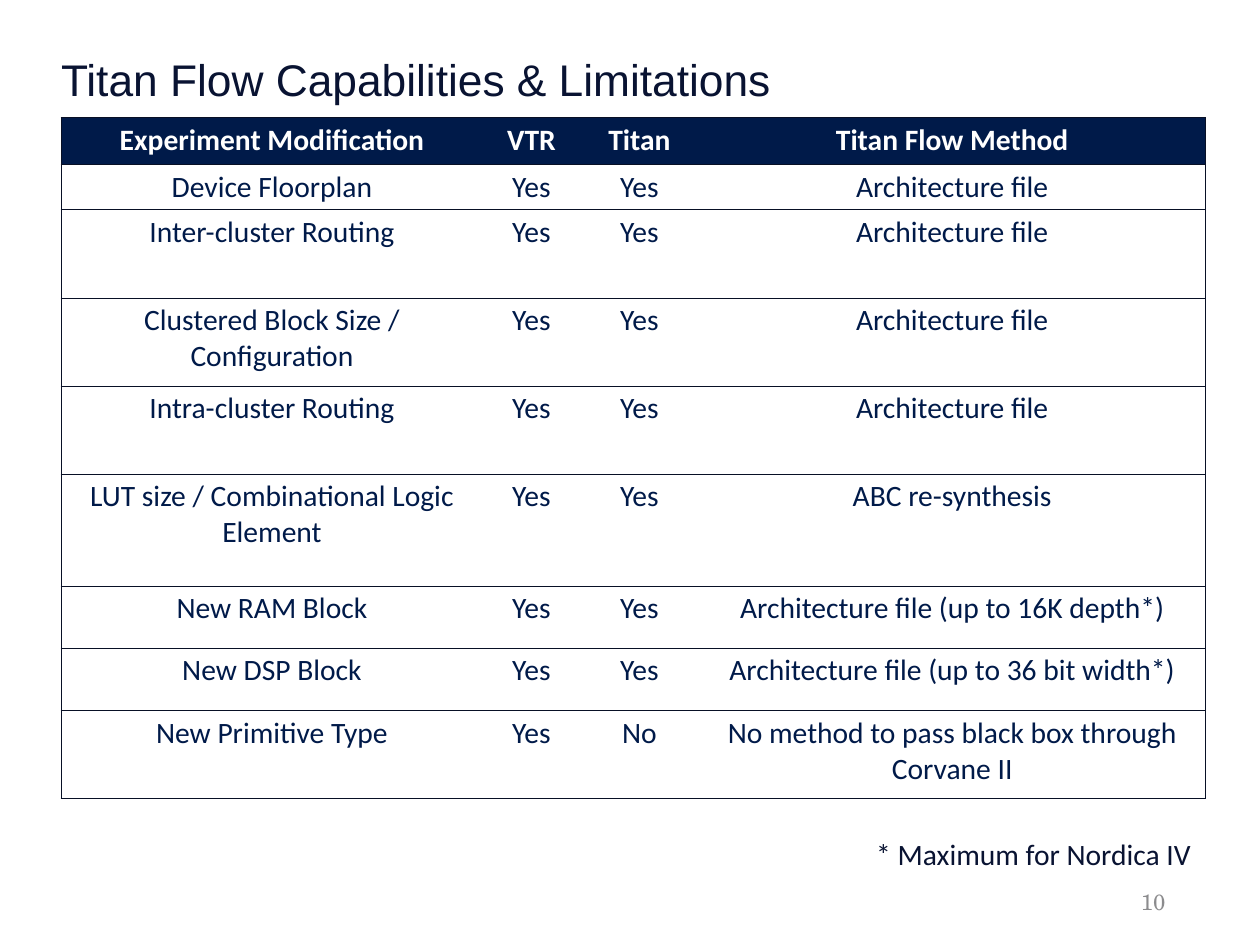
import dataclasses

import lxml.etree
import pptx
import pptx.dml.color
import pptx.enum.text
import pptx.oxml.ns
import pptx.util

Cm = pptx.util.Cm
Align = pptx.enum.text.PP_ALIGN
Anchor = pptx.enum.text.MSO_ANCHOR


@dataclasses.dataclass(frozen=True)
class Theme:
    """Colours, fonts and type sizes of the slide."""
    ink: str = "091332"
    navy: str = "001A49"
    rule: str = "081025"
    white: str = "FFFFFF"
    grey: str = "8C8C8E"
    head: str = "Arial"
    body: str = "Calibri"
    folio: str = "TeX Gyre Schola"
    big: int = 36
    text: int = 24
    small: int = 18
    line: int = 1


THEME = Theme()
FILE = "Architecture file"
HEADS = ("Experiment Modification", "VTR", "Titan", "Titan Flow Method")
WIDTHS = (12.09, 2.79, 3.4, 14.53)
HEAD_H = 1.35
ROWS = (
    (1.29, "Device Floorplan", "Yes", "Yes", FILE),
    (2.53, "Inter-cluster Routing", "Yes", "Yes", FILE),
    (2.53, "Clustered Block Size / Configuration", "Yes", "Yes", FILE),
    (2.53, "Intra-cluster Routing", "Yes", "Yes", FILE),
    (3.21, "LUT size / Combinational Logic Element", "Yes", "Yes",
     "ABC re-synthesis"),
    (1.78, "New RAM Block", "Yes", "Yes",
     "Architecture file (up to 16K depth*)"),
    (1.78, "New DSP Block", "Yes", "Yes",
     "Architecture file (up to 36 bit width*)"),
    (2.53, "New Primitive Type", "Yes", "No",
     "No method to pass black box through Corvane II"),
)


def rgb(code):
    """Turn a hex code into a colour."""
    return pptx.dml.color.RGBColor.from_string(code)


def add_run(para, text, face, size, color, bold=False):
    """Add one styled run to a paragraph."""
    run = para.add_run()
    run.text = text
    run.font.name = face
    run.font.size = pptx.util.Pt(size)
    run.font.bold = bold
    run.font.color.rgb = rgb(color)


def add_label(slide, box, text, face, size, color, align=Align.LEFT,
              anchor=Anchor.TOP):
    """Place a line of text in a box and return its frame."""
    frame = slide.shapes.add_textbox(*map(Cm, box)).text_frame
    frame.word_wrap = True
    frame.vertical_anchor = anchor
    para = frame.paragraphs[0]
    para.alignment = align
    add_run(para, text, face, size, color)
    return frame


def add_title(slide, box):
    """Place the slide title flush with its box."""
    frame = add_label(slide, box, "Titan Flow Capabilities & Limitations",
                      THEME.head, THEME.big, THEME.ink)
    frame.margin_left = frame.margin_right = 0
    frame.margin_top = frame.margin_bottom = 0
    frame.paragraphs[0].line_spacing = pptx.util.Pt(THEME.big)


def set_edges(cell, drawn):
    """Rule the named sides of a cell and clear the others."""
    props = cell._tc.get_or_add_tcPr()
    qn = pptx.oxml.ns.qn
    for spot, side in enumerate("LRTB"):
        edge = lxml.etree.Element(qn(f"a:ln{side}"))
        edge.set("w", str(pptx.util.Pt(THEME.line)))
        if side in drawn:
            fill = lxml.etree.SubElement(edge, qn("a:solidFill"))
            lxml.etree.SubElement(fill, qn("a:srgbClr"), val=THEME.rule)
        else:
            lxml.etree.SubElement(edge, qn("a:noFill"))
        props.insert(spot, edge)


def fill_cell(cell, text, head, drawn):
    """Write, fill and rule one table cell."""
    para = cell.text_frame.paragraphs[0]
    para.alignment = Align.CENTER
    color = THEME.white if head else THEME.navy
    add_run(para, text, THEME.body, THEME.text, color, head)
    if head:
        cell.fill.solid()
        cell.fill.fore_color.rgb = rgb(THEME.navy)
    else:
        cell.fill.background()
    set_edges(cell, drawn)


def add_grid(slide, left, top):
    """Build the table of capabilities from its top left corner."""
    rows = ((HEAD_H, *HEADS), *ROWS)
    high = sum(row[0] for row in rows)
    box = map(Cm, (left, top, sum(WIDTHS), high))
    table = slide.shapes.add_table(len(rows), len(WIDTHS), *box).table
    table.first_row = table.horz_banding = False
    for col, wide in zip(table.columns, WIDTHS):
        col.width = Cm(wide)
    sides = {0: "LTB", len(WIDTHS) - 1: "RTB"}
    for r, (tall, *texts) in enumerate(rows):
        table.rows[r].height = Cm(tall)
        for c, text in enumerate(texts):
            fill_cell(table.cell(r, c), text, r == 0, sides.get(c, "TB"))


def add_foot(slide, left, top):
    """Place the footnote and the page number below it."""
    add_label(slide, (left, top, 10.5, 1.3), "* Maximum for Nordica IV",
              THEME.body, THEME.text, THEME.ink)
    add_label(slide, (left + 0.66, top + 1.27, 8.13, 1.45), "10",
              THEME.folio, THEME.small, THEME.grey, Align.RIGHT,
              Anchor.MIDDLE)


def main():
    """Build the slide and save it."""
    deck = pptx.Presentation()
    deck.slide_width, deck.slide_height = Cm(36.12), Cm(27.1)
    slide = deck.slides.add_slide(deck.slide_layouts[6])
    add_title(slide, (1.75, 1.75, 32.64, 1.63))
    add_grid(slide, 1.75, 3.38)
    add_foot(slide, 24.87, 23.85)
    deck.save("out.pptx")


if __name__ == "__main__":
    main()
